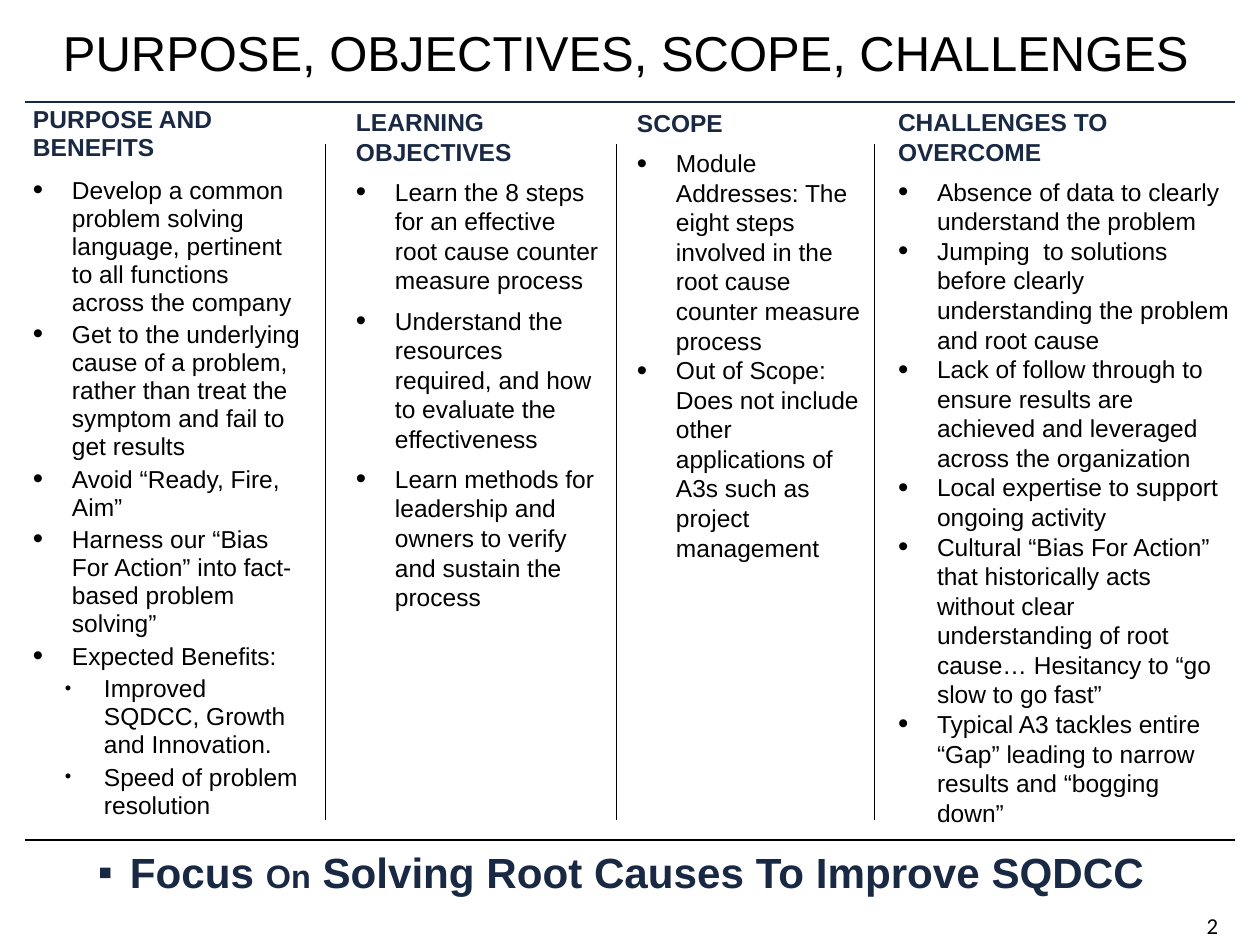
from lxml import etree
from pptx import Presentation
from pptx.dml.color import RGBColor
from pptx.enum.shapes import MSO_CONNECTOR
from pptx.enum.text import MSO_ANCHOR, PP_ALIGN
from pptx.oxml.ns import qn
from pptx.util import Emu, Pt

COLORS = {"navy": "192943", "black": "000000"}
EMU_PER_PX = 914400 / 126
BULLET_INDENT = 39

# Each column: box, line spacing (pt), space before and after bullets (pt),
# left margin, heading, and bullets as (level, text).
COLUMNS = [
    ((33, 105, 268, 764), 16, 2.6, 0, 0, "PURPOSE AND BENEFITS", [
        (0, "Develop a common problem solving language, pertinent to all functions across the company"),
        (0, "Get to the underlying cause of a problem, rather than treat the symptom and fail to get results"),
        (0, "Avoid “Ready, Fire, Aim”"),
        (0, "Harness our “Bias For Action” into fact-based problem solving”"),
        (0, "Expected Benefits:"),
        (1, "Improved SQDCC, Growth and Innovation."),
        (1, "Speed of problem resolution"),
    ]),
    ((348, 107, 256, 587), 16.9, 0, 6, 8, "LEARNING OBJECTIVES", [
        (0, "Learn the 8 steps for an effective root cause counter measure process"),
        (0, "Understand the resources required, and how to evaluate the effectiveness"),
        (0, "Learn methods for leadership and owners to verify and sustain the process"),
    ]),
    ((637, 108, 229, 456), 16.9, 0, 0, 0, "SCOPE", [
        (0, "Module Addresses: The eight steps involved in the root cause counter measure process"),
        (0, "Out of Scope: Does not include other applications of A3s such as project management"),
    ]),
    ((898, 107, 333, 723), 16.9, 0, 0, 0, "CHALLENGES TO OVERCOME", [
        (0, "Absence of data to clearly understand the problem"),
        (0, "Jumping  to solutions before clearly understanding the problem and root cause"),
        (0, "Lack of follow through to ensure results are achieved and leveraged across the organization"),
        (0, "Local expertise to support ongoing activity"),
        (0, "Cultural “Bias For Action” that historically acts without clear understanding of root cause… "
            "Hesitancy to “go slow to go fast”"),
        (0, "Typical A3 tackles entire “Gap” leading to narrow results and “bogging down”"),
    ]),
]


def px(value):
    return Emu(round(value * EMU_PER_PX))


def add_text_box(slide, box, anchor=MSO_ANCHOR.TOP):
    frame = slide.shapes.add_textbox(*map(px, box)).text_frame
    frame.word_wrap = True
    frame.vertical_anchor = anchor
    frame.margin_left = frame.margin_right = frame.margin_top = frame.margin_bottom = 0
    return frame


def style_run(run, size, color, bold=False, name="Arial"):
    font = run.font
    font.size, font.bold, font.name = Pt(size), bold, name
    font.color.rgb = RGBColor.from_string(COLORS[color])


def set_bullet(paragraph, char, color, percent, margin, indent):
    properties = paragraph._p.get_or_add_pPr()
    properties.set("marL", str(px(margin)))
    properties.set("indent", str(px(indent)))
    bullet_color = etree.SubElement(properties, qn("a:buClr"))
    etree.SubElement(bullet_color, qn("a:srgbClr"), val=COLORS[color])
    etree.SubElement(properties, qn("a:buSzPct"), val=str(percent * 1000))
    etree.SubElement(properties, qn("a:buFont"), typeface="Arial")
    etree.SubElement(properties, qn("a:buChar"), char=char)


def add_rule(slide, start, end, color, width):
    line = slide.shapes.add_connector(MSO_CONNECTOR.STRAIGHT, *map(px, start + end))
    line.line.color.rgb = RGBColor.from_string(COLORS[color])
    line.line.width = Pt(width)
    etree.SubElement(line._element.spPr, qn("a:effectLst"))


def add_title(slide, box):
    paragraph = add_text_box(slide, box).paragraphs[0]
    paragraph.text = "PURPOSE, OBJECTIVES, SCOPE, CHALLENGES"
    paragraph.line_spacing = Pt(36)
    style_run(paragraph.runs[0], 28, "black")


def add_column(slide, box, spacing, before, after, margin, heading, bullets):
    frame = add_text_box(slide, box)
    paragraph = frame.paragraphs[0]
    paragraph.text = heading
    paragraph._p.get_or_add_pPr().set("marL", str(px(margin)))
    paragraph.line_spacing, paragraph.space_after = Pt(spacing), Pt(6)
    style_run(paragraph.runs[0], 14, "navy", bold=True)
    for level, text in bullets:
        paragraph = frame.add_paragraph()
        paragraph.text = text
        paragraph.level = level
        text_left = margin + BULLET_INDENT + 32 * level
        set_bullet(paragraph, "•", "black", 75 if level else 120, text_left, -BULLET_INDENT)
        paragraph.line_spacing = Pt(spacing)
        paragraph.space_before, paragraph.space_after = Pt(before), Pt(after)
        style_run(paragraph.runs[0], 14, "black")


def add_focus_line(slide, box):
    paragraph = add_text_box(slide, box, MSO_ANCHOR.MIDDLE).paragraphs[0]
    set_bullet(paragraph, "▪", "navy", 100, 0, -32)
    paragraph.alignment = PP_ALIGN.CENTER
    paragraph.line_spacing = 0.8
    for text, size in (("Focus ", 24.1), ("On", 18.5),
                       (" Solving Root Causes To Improve SQDCC", 24.1)):
        run = paragraph.add_run()
        run.text = text
        style_run(run, size, "navy", bold=True)


def add_page_number(slide, box):
    paragraph = add_text_box(slide, box).paragraphs[0]
    paragraph.text = "2"
    paragraph.alignment = PP_ALIGN.RIGHT
    style_run(paragraph.runs[0], 13, "black", name="Calibri")


def main():
    presentation = Presentation()
    presentation.slide_width, presentation.slide_height = px(1260), px(945)
    slide = presentation.slides.add_slide(presentation.slide_layouts[6])
    add_rule(slide, (25, 102), (1235, 102), "navy", 0.75)
    add_rule(slide, (25, 840), (1235, 840), "black", 1)
    add_page_number(slide, (1176, 912, 42, 28))
    add_title(slide, (63, 18, 1134, 158))
    add_focus_line(slide, (25, 849, 1210, 55))
    for x in (325, 616, 874):
        add_rule(slide, (x, 144), (x, 820), "black", 0.25)
    for column in COLUMNS:
        add_column(slide, *column)
    presentation.save("out.pptx")


if __name__ == "__main__":
    main()
